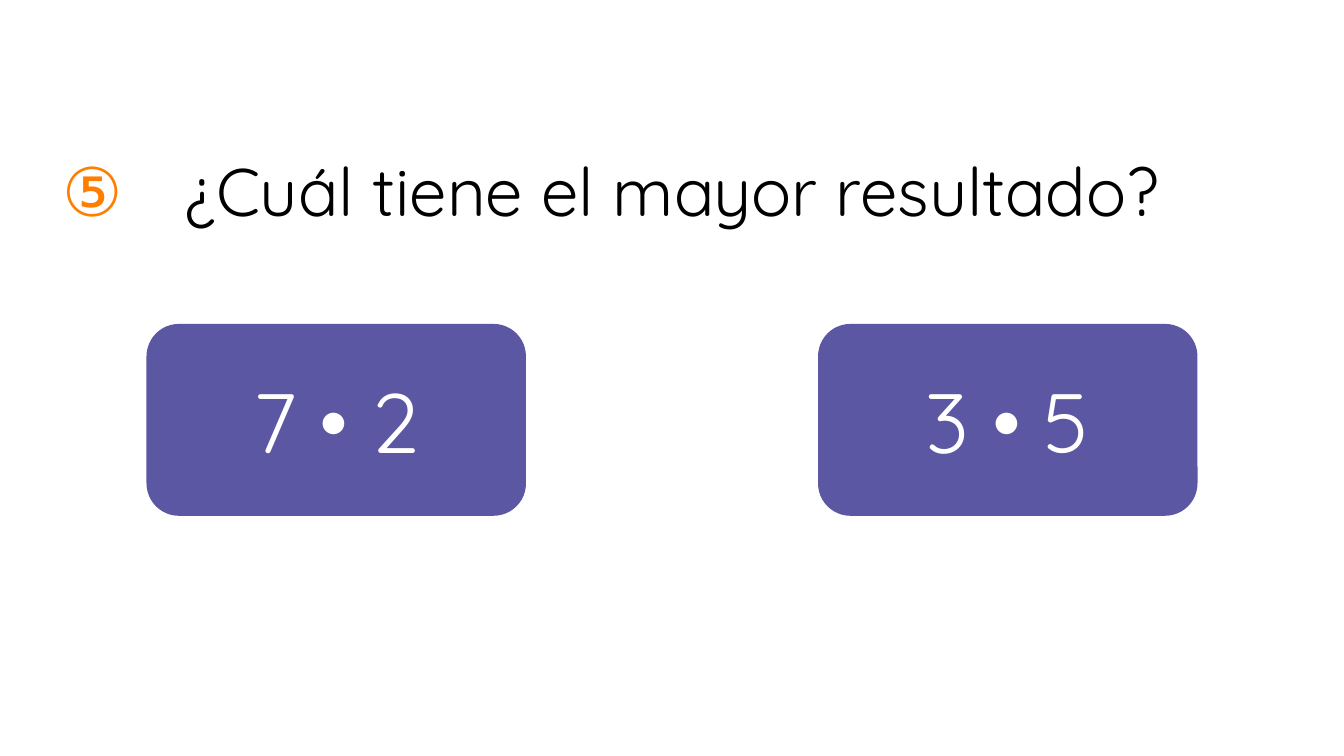
"""Build a quiz slide that asks which of two products is larger."""
from pptx import Presentation, util as u
from pptx.dml.color import RGBColor
from pptx.enum import shapes, text

HUES = {"mark": "FF7E00", "ink": "000000", "card": "5C57A2", "light": "FFFFFF"}
WIDE, HIGH = u.Inches(13.33), u.Inches(7.5)


def hue(name):
    return RGBColor.from_string(HUES[name])


def write(shape, words, size, name, anchor):
    frame = shape.text_frame
    form = {"word_wrap": True, "auto_size": text.MSO_AUTO_SIZE.NONE,
            "vertical_anchor": anchor}
    for key, value in form.items():
        setattr(frame, key, value)
    line = frame.paragraphs[0]
    line.text = words
    line.alignment = text.PP_ALIGN.CENTER
    for key, value in {"name": "Quicksand", "size": u.Pt(size), "bold": False}.items():
        setattr(line.font, key, value)
    line.font.color.rgb = hue(name)


deck = Presentation()
deck.slide_width, deck.slide_height = WIDE, HIGH
slide = deck.slides.add_slide(deck.slide_layouts[5])

top = u.Inches(1.43)
mark = slide.shapes.add_textbox(u.Inches(0.19), top, u.Inches(1.46), u.Inches(0.91))
write(mark, "⑤", 48, "mark", text.MSO_ANCHOR.TOP)

title = slide.shapes.title
place = {"left": 1.64, "top": 1.43, "width": 10.04, "height": 1.21}
for key, value in place.items():
    setattr(title, key, u.Inches(value))
write(title, "¿Cuál tiene el mayor resultado?", 48, "ink", text.MSO_ANCHOR.TOP)

edge, width = u.Inches(1.46), u.Inches(3.75)
step = WIDE - 2 * edge - width
for col, words in enumerate(["7 • 2", "3 • 5"]):
    card = slide.shapes.add_shape(
        shapes.MSO_SHAPE.ROUNDED_RECTANGLE,
        edge + col * step, u.Inches(3.22), width, u.Inches(1.89))
    card.shadow.inherit = False
    card.fill.solid()
    card.fill.fore_color.rgb = hue("card")
    card.line.color.rgb = hue("card")
    card.line.width = u.Pt(1)
    write(card, words, 60, "light", text.MSO_ANCHOR.MIDDLE)

deck.save("out.pptx")
